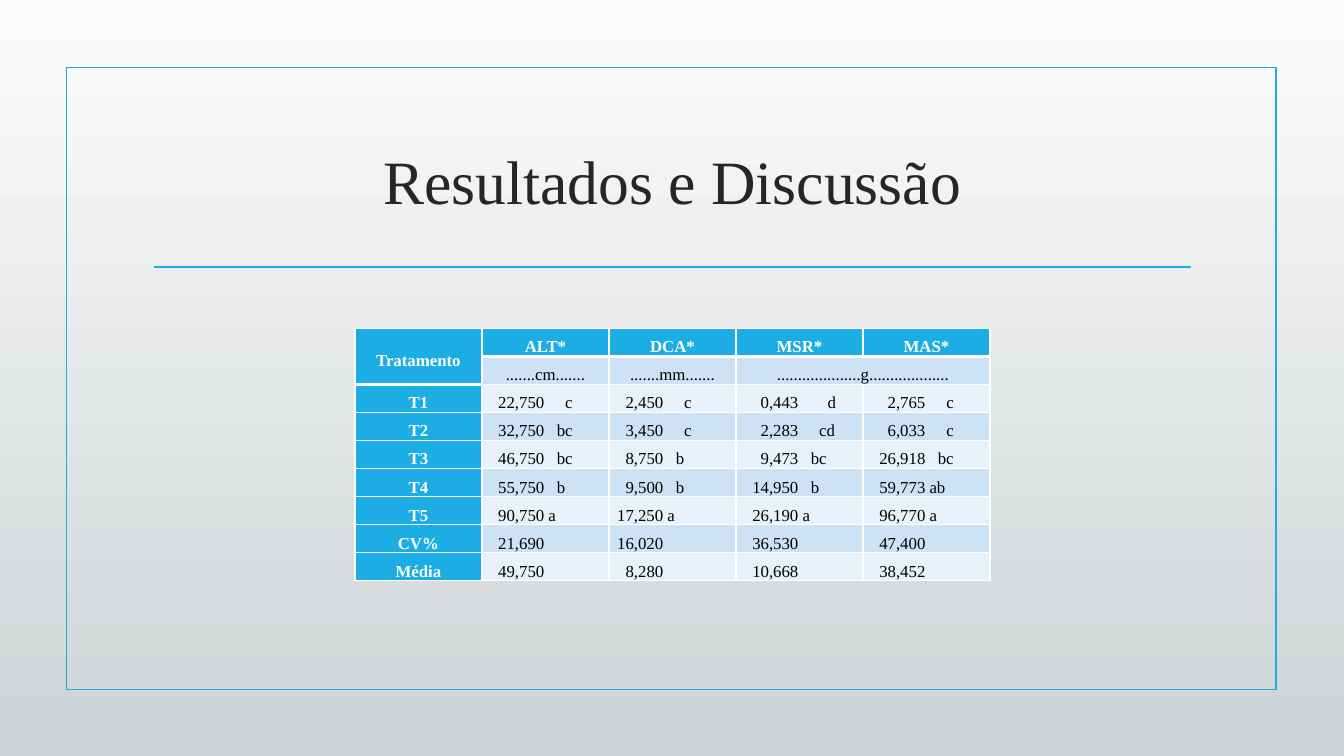
from lxml import etree
from pptx import Presentation
from pptx.dml.color import RGBColor
from pptx.enum.shapes import MSO_CONNECTOR, MSO_SHAPE
from pptx.enum.text import MSO_ANCHOR, PP_ALIGN
from pptx.oxml import parse_xml
from pptx.oxml.ns import nsdecls, qn
from pptx.util import Inches, Pt

RECT, STRAIGHT = MSO_SHAPE.RECTANGLE, MSO_CONNECTOR.STRAIGHT
MIDDLE = MSO_ANCHOR.MIDDLE
LEFT, CENTER = PP_ALIGN.LEFT, PP_ALIGN.CENTER

FONT = "Times New Roman"
BLUE, WHITE, BLACK, DARK = "1CADE4", "FFFFFF", "000000", "262626"
BANDS = ["E8F1FA", "CDE3F5"]
NUMBER_STOPS = [0.55, 0.47, 0.55, 0.55]
LETTER_GAP, LETTER_STEP = 0.04, 0.083

HEADERS = ["Tratamento", "ALT*", "DCA*", "MSR*", "MAS*"]
UNITS = ["", ".......cm.......", ".......mm.......",
         "....................g...................", ""]
RESULTS = [
    ["T1", "22,750 c", "2,450 c", "0,443 d", "2,765 c"],
    ["T2", "32,750 bc", "3,450 c", "2,283 cd", "6,033 c"],
    ["T3", "46,750 bc", "8,750 b", "9,473 bc", "26,918 bc"],
    ["T4", "55,750 b", "9,500 b", "14,950 b", "59,773 ab"],
    ["T5", "90,750 a", "17,250 a", "26,190 a", "96,770 a"],
    ["CV%", "21,690", "16,020", "36,530", "47,400"],
    ["Média", "49,750", "8,280", "10,668", "38,452"],
]


def rgb(color):
    """Return the colour for a hex string."""
    return RGBColor.from_string(color)


def write(tf, text, size=12, color=BLACK, bold=False, align=CENTER,
          spacing=1.0, stops=()):
    """Write one formatted paragraph, with tab stops as (inches, side)."""
    p = tf.paragraphs[0]
    p.alignment = align
    p.line_spacing = spacing
    if stops:
        tabs = etree.SubElement(p._p.get_or_add_pPr(), qn("a:tabLst"))
        for pos, side in stops:
            etree.SubElement(tabs, qn("a:tab"), pos=str(Inches(pos)), algn=side)
    r = p.add_run()
    r.text = text
    r.font.name, r.font.size, r.font.bold = FONT, Pt(size), bold
    r.font.color.rgb = rgb(color)


def style_cell(cell, fill, bottom=1):
    """Set the borders, fill, margins and anchor of a cell."""
    tc_pr = cell._tc.get_or_add_tcPr()
    for side, width in (("L", 1), ("R", 1), ("T", 1), ("B", bottom)):
        tc_pr.append(parse_xml(
            f'<a:ln{side} {nsdecls("a")} w="{Pt(width)}"><a:solidFill>'
            f'<a:srgbClr val="{WHITE}"/></a:solidFill></a:ln{side}>'))
    cell.fill.solid()
    cell.fill.fore_color.rgb = rgb(fill)
    cell.margin_left = cell.margin_right = Inches(0.07)
    cell.margin_top = cell.margin_bottom = 0
    cell.vertical_anchor = MIDDLE


def write_result(tf, result, number_stop):
    """Write a right-aligned number and its group letters, stepped by letter."""
    number, _, letters = result.partition(" ")
    text, stops = "\t" + number, [(number_stop, "r")]
    if letters:
        step = "abcd".index(letters[0]) * LETTER_STEP
        text += "\t" + letters
        stops.append((number_stop + LETTER_GAP + step, "l"))
    write(tf, text, align=LEFT, spacing=1.5, stops=stops)


def add_background(slide):
    """Fill the slide with a vertical gradient."""
    fill = slide.background.fill
    fill.gradient()
    fill.gradient_angle = 270
    for stop, color, pos in zip(fill.gradient_stops, ("FCFCFC", "CED3D5"), (0, 1)):
        stop.color.rgb = rgb(color)
        stop.position = pos


def add_frame(slide, x, y, w, h):
    """Draw the outline and the rule under the title."""
    sp = slide.shapes.add_shape(RECT, Inches(x), Inches(y), Inches(w), Inches(h))
    sp.shadow.inherit = False
    sp.fill.background()
    rule_y = Inches(y + 1.98)
    rule = slide.shapes.add_connector(
        STRAIGHT, Inches(x + 0.87), rule_y, Inches(x + w - 0.85), rule_y)
    etree.SubElement(rule._element.spPr, qn("a:effectLst"))
    for s in (sp, rule):
        s.line.color.rgb = rgb(BLUE)
        s.line.width = Pt(1.25)


def add_title(slide, text, x, y, w, h):
    """Place and format the title."""
    title = slide.shapes.title
    title.left, title.top = Inches(x), Inches(y)
    title.width, title.height = Inches(w), Inches(h)
    title.text_frame.vertical_anchor = MIDDLE
    write(title.text_frame, text, size=44, color=DARK)


def add_results(slide, x, y, w, h):
    """Build the table of treatments."""
    rows = [HEADERS, UNITS, *RESULTS]
    table = slide.shapes.add_table(len(rows), len(HEADERS), Inches(x), Inches(y),
                                   Inches(w), Inches(h)).table
    for i, row in enumerate(rows):
        for j, text in enumerate(row):
            cell = table.cell(i, j)
            head = i == 0 or j == 0
            thick = i == 0 or (i == 1 and j == 0)
            style_cell(cell, BLUE if head else BANDS[i % 2], 3 if thick else 1)
            if not text:
                continue
            if i > 1 and j > 0:
                write_result(cell.text_frame, text, NUMBER_STOPS[j - 1])
            else:
                write(cell.text_frame, text, color=WHITE if head else BLACK,
                      bold=head, spacing=1.5)
    table.cell(0, 0).merge(table.cell(1, 0))
    table.cell(1, 3).merge(table.cell(1, 4))


def main():
    """Build and save the slide."""
    prs = Presentation()
    prs.slide_width, prs.slide_height = Inches(13.33), Inches(7.5)
    slide = prs.slides.add_slide(prs.slide_layouts[5])
    add_background(slide)
    add_frame(slide, 0.66, 0.67, 12, 6.17)
    add_title(slide, "Resultados e Discussão", 1.42, 1.07, 10.5, 1.43)
    add_results(slide, 3.52, 3.26, 6.3, 2.5)
    prs.save("out.pptx")


if __name__ == "__main__":
    main()
